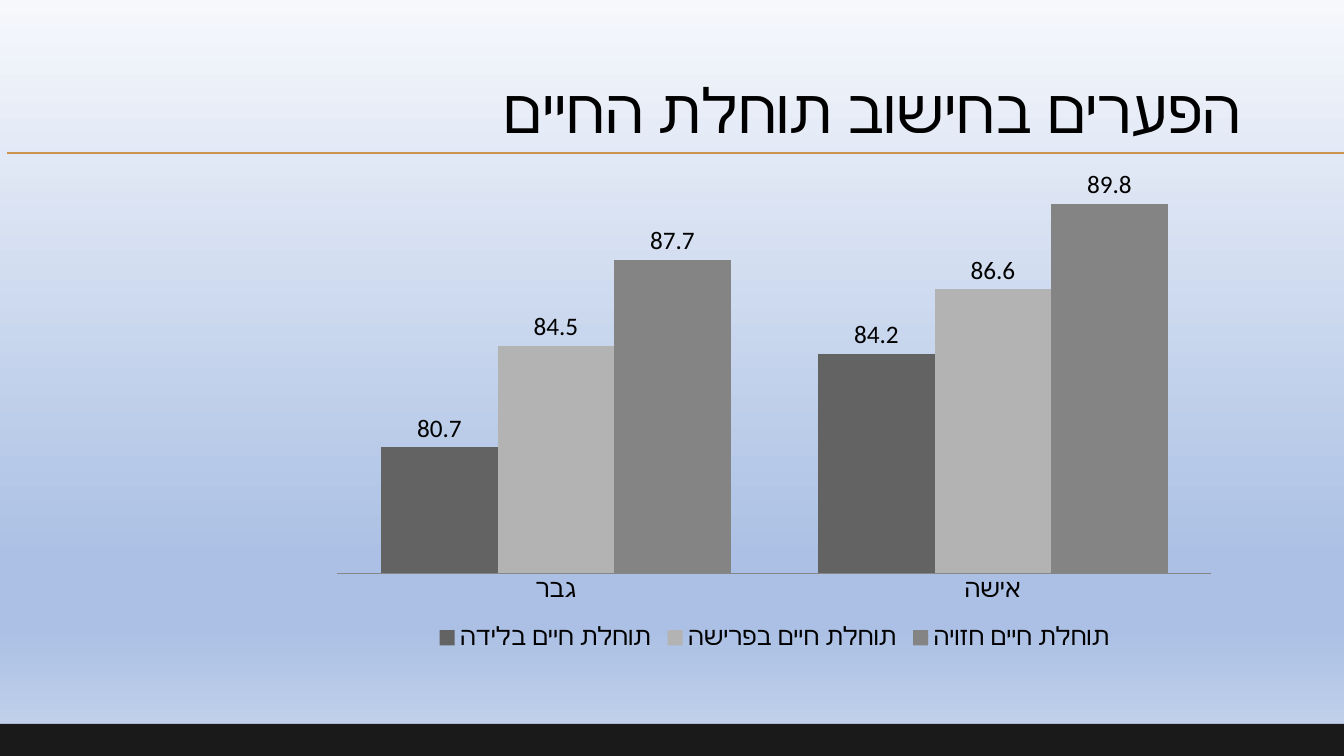
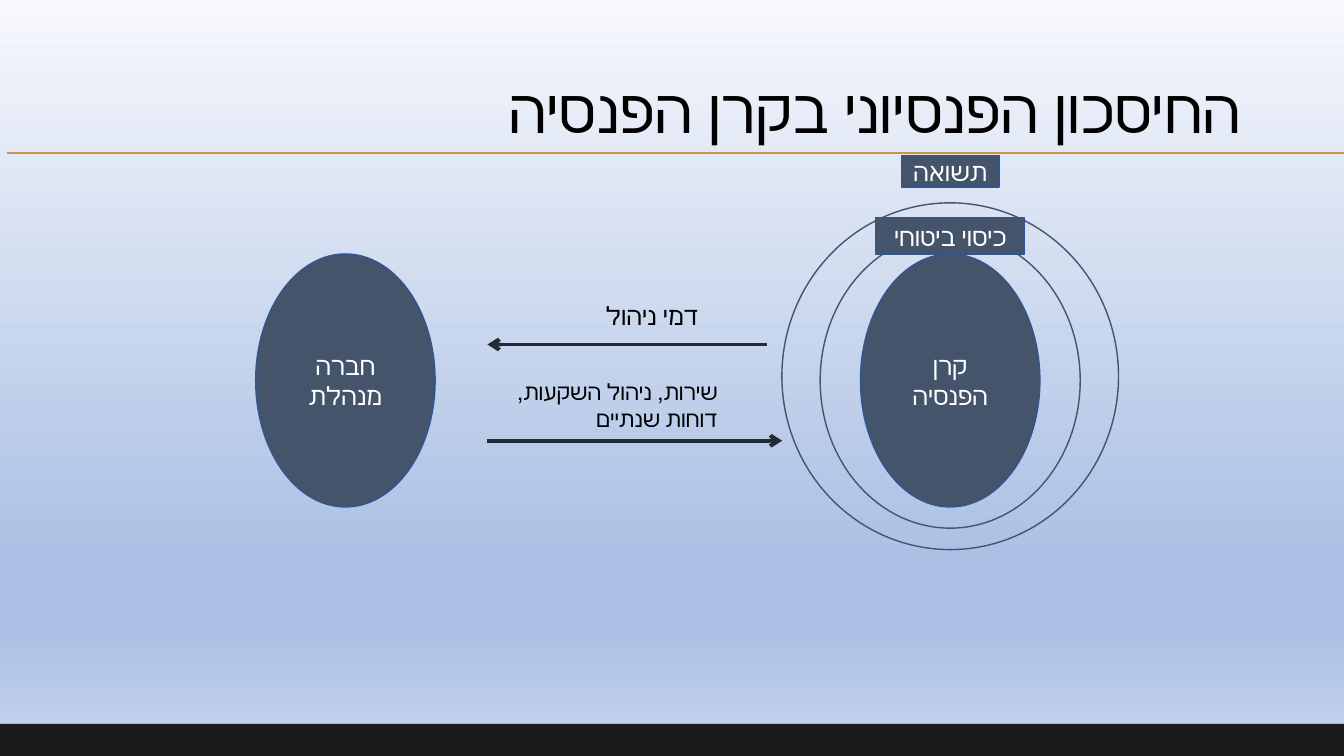
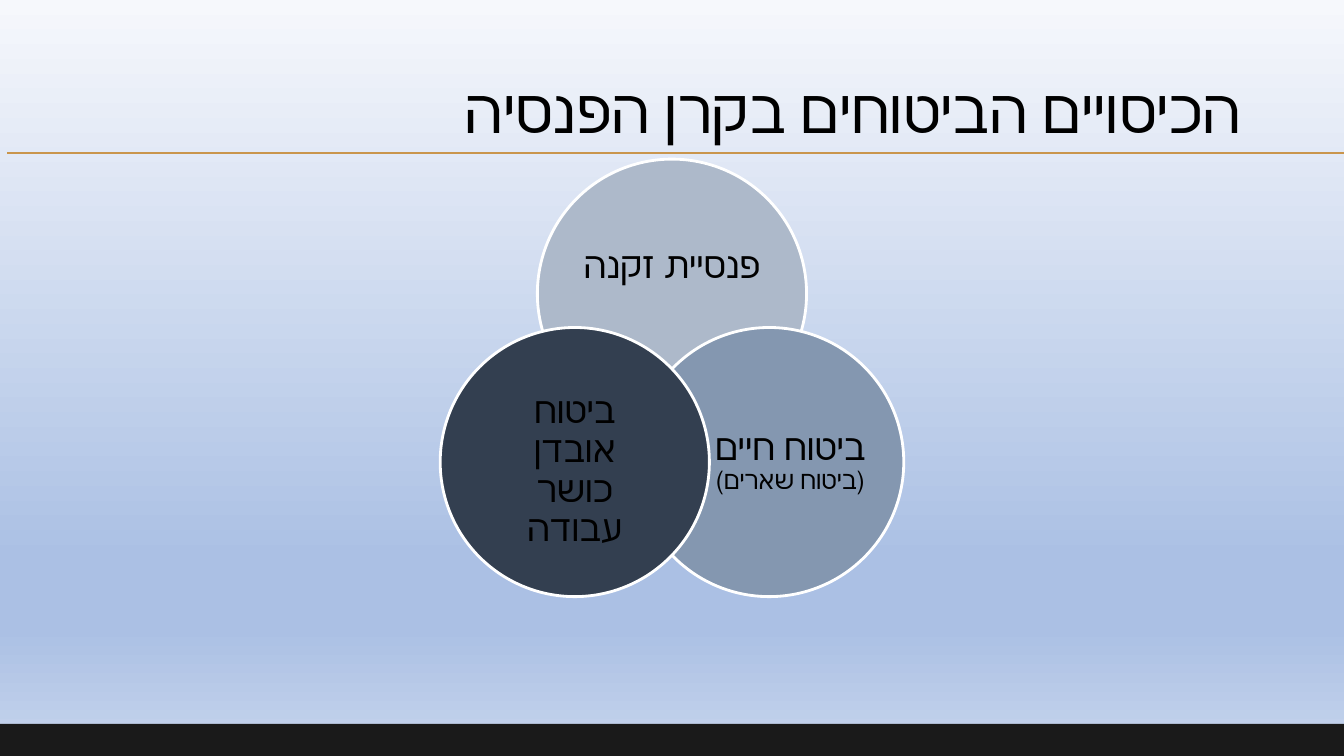
import math

import pptx
import pptx.chart.data
import pptx.dml.color
import pptx.enum.chart
import pptx.enum.lang
import pptx.enum.shapes
import pptx.enum.text
import pptx.oxml.ns
import pptx.util
from lxml import etree

RGB = pptx.dml.color.RGBColor
BLACK = RGB(0x00, 0x00, 0x00)
WHITE = RGB(0xFF, 0xFF, 0xFF)
GOLD = RGB(0xC9, 0x95, 0x4C)
COAL = RGB(0x1A, 0x1A, 0x1A)
SLATE = RGB(0x44, 0x54, 0x6A)
EDGE = RGB(0x32, 0x54, 0x91)
INK = RGB(0x22, 0x2A, 0x35)
MIST = RGB(0xAD, 0xB9, 0xCA)
STEEL = RGB(0x84, 0x97, 0xB0)
NIGHT = RGB(0x33, 0x3F, 0x50)
AXIS = RGB(0x86, 0x86, 0x86)
BARS = [RGB(0x63, 0x63, 0x63), RGB(0xB3, 0xB3, 0xB3), RGB(0x84, 0x84, 0x84)]
SKY = [
    (0, RGB(0xF6, 0xF8, 0xFC)),
    (74, RGB(0xAB, 0xC0, 0xE4)),
    (83, RGB(0xAB, 0xC0, 0xE4)),
    (100, RGB(0xC7, 0xD5, 0xED)),
]

FONT = "Calibri"
WIDE = pptx.util.Inches(13.33)
HIGH = pptx.util.Inches(7.5)
FORM = pptx.enum.shapes.MSO_SHAPE
ALIGN = pptx.enum.text.PP_ALIGN
ANCHOR = pptx.enum.text.MSO_ANCHOR
HEBREW = pptx.enum.lang.MSO_LANGUAGE_ID.HEBREW


def across(share):
    return round(WIDE * share / 100)


def down(share):
    return round(HIGH * share / 100)


def frame(cx, cy, w, h):
    """Turn a centre and size in percent of the slide into left, top, width, height."""
    return across(cx - w / 2), down(cy - h / 2), across(w), down(h)


def tag(parent, name, **attrs):
    return etree.SubElement(parent, pptx.oxml.ns.qn(name), attrs)


def write(shape, text, sizes, color, align=ALIGN.CENTER, anchor=ANCHOR.MIDDLE,
          inset=None, space=1.0):
    """Fill a shape with one right-to-left paragraph; one size for each line."""
    body = shape.text_frame
    body.word_wrap = True
    body.vertical_anchor = anchor
    if inset is not None:
        body.margin_left = body.margin_right = inset
        body.margin_top = body.margin_bottom = inset
    para = body.paragraphs[0]
    para.text = text
    para.alignment = align
    para.line_spacing = space
    para._p.get_or_add_pPr().set("rtl", "1")
    for run, size in zip(para.runs, sizes):
        run.font.size = pptx.util.Pt(size)
        run.font.name = FONT
        run.font.color.rgb = color
        run.font.language_id = HEBREW


def label(slide, box, text, size, **style):
    write(slide.shapes.add_textbox(*frame(*box)), text, [size], BLACK, **style)


def shape(slide, form, box, fill=None, edge=None, width=1):
    item = slide.shapes.add_shape(form, *frame(*box))
    item.shadow.inherit = False
    if fill is None:
        item.fill.background()
    else:
        item.fill.solid()
        item.fill.fore_color.rgb = fill
    if edge is None:
        item.line.fill.background()
    else:
        item.line.color.rgb = edge
        item.line.width = pptx.util.Pt(width)
    return item


def node(slide, form, box, text):
    write(shape(slide, form, box, SLATE, EDGE), text, [18], WHITE)


def line(slide, start, end, y, color, width, arrow=False):
    item = slide.shapes.add_connector(
        pptx.enum.shapes.MSO_CONNECTOR.STRAIGHT,
        across(start), down(y), across(end), down(y))
    item.line.color.rgb = color
    item.line.width = pptx.util.Pt(width)
    if arrow:
        tag(item.line._get_or_add_ln(), "a:tailEnd", type="arrow")
    tag(item._element.spPr, "a:effectLst")


def paint(master):
    """Give every slide the sky gradient."""
    fill = master.background.fill
    fill.gradient()
    fill.gradient_angle = 270
    stops = next(master.element.iter(pptx.oxml.ns.qn("a:gsLst")))
    for stop in list(stops):
        stops.remove(stop)
    for place, color in SKY:
        stop = tag(stops, "a:gs", pos=str(place * 1000))
        tag(stop, "a:srgbClr", val=str(color))


def page(deck, title):
    slide = deck.slides.add_slide(deck.slide_layouts[6])
    line(slide, 100, 0.5, 20.2, GOLD, 1.5)
    shape(slide, FORM.RECTANGLE, (50, 97.87, 100, 4.27), COAL)
    label(slide, (50, 15, 86.25, 19.33), title, 44, align=ALIGN.RIGHT, space=0.9)
    return slide


def gaps(deck):
    slide = page(deck, "הפערים בחישוב תוחלת החיים")
    data = pptx.chart.data.CategoryChartData()
    data.categories = ["גבר", "אישה"]
    data.add_series("תוחלת חיים בלידה", (80.7, 84.2))
    data.add_series("תוחלת חיים בפרישה", (84.5, 86.6))
    data.add_series("תוחלת חיים חזויה", (87.7, 89.8))
    kind = pptx.enum.chart.XL_CHART_TYPE.COLUMN_CLUSTERED
    box = frame(57.62, 52.25, 67.73, 68.93)
    chart = slide.shapes.add_chart(kind, *box, data).chart
    chart.font.size = pptx.util.Pt(18)
    chart.font.name = FONT
    chart.font.color.rgb = BLACK
    chart.has_title = False
    chart.has_legend = True
    chart.legend.position = pptx.enum.chart.XL_LEGEND_POSITION.BOTTOM
    chart.legend.include_in_layout = False

    scale = chart.value_axis
    scale.minimum_scale, scale.maximum_scale = 76, 92
    scale.has_major_gridlines = False
    scale.visible = False
    base = chart.category_axis
    base.major_tick_mark = pptx.enum.chart.XL_TICK_MARK.NONE
    base.format.line.color.rgb = AXIS

    plot = chart.plots[0]
    plot.gap_width = 75
    plot.overlap = 0
    plot.vary_by_categories = False
    plot.has_data_labels = True
    plot.data_labels.show_value = True
    plot.data_labels.position = pptx.enum.chart.XL_LABEL_POSITION.OUTSIDE_END
    for series, color in zip(plot.series, BARS):
        series.format.fill.solid()
        series.format.fill.fore_color.rgb = color


def savings(deck):
    slide = page(deck, "החיסכון הפנסיוני בקרן הפנסיה")
    firm, fund, mid = 25.7, 70.7, 50.33
    for cx, text in ((firm, "חברה מנהלת"), (fund, "קרן הפנסיה")):
        node(slide, FORM.OVAL, (cx, mid, 13.35, 33.47), text)
    line(slide, 36.27, 58.2, 58.3, INK, 2.75, arrow=True)
    line(slide, 57.08, 36.27, 45.57, INK, 2.75, arrow=True)
    for cy, w, h in ((mid, 19.35, 39.07), (49.77, 25.05, 45.87)):
        shape(slide, FORM.OVAL, (fund, cy, w, h), edge=SLATE)
    for cy, w, h, text in ((22.67, 7.28, 4.13, "תשואה"),
                           (31.22, 11.1, 4.87, "כיסוי ביטוחי")):
        node(slide, FORM.RECTANGLE, (fund, cy, w, h), text)
    for box, text, size in (
            ((46.61, 41.67, 12.23, 5.33), "דמי ניהול", 18),
            ((44.7, 53.6, 18.9, 8.53), "שירות, ניהול השקעות, דוחות שנתיים", 16)):
        label(slide, box, text, size, align=ALIGN.RIGHT, anchor=ANCHOR.TOP)


def covers(deck):
    """Three overlapping circles set evenly around one centre."""
    slide = page(deck, "הכיסויים הביטוחים בקרן הפנסיה")
    parts = [
        (MIST, "פנסיית זקנה", [26], (0, -3.55, 14.7, 16)),
        (STEEL, "ביטוח חיים\v(ביטוח שארים)", [26, 18], (1.57, 0, 12, 19.6)),
        (NIGHT, "ביטוח אובדן כושר עבודה", [26], (0, 1.15, 12, 19.6)),
    ]
    for spot, (color, text, sizes, (dx, dy, w, h)) in enumerate(parts):
        angle = math.radians(120 * spot - 90)
        cx = 50 + 8.35 * math.cos(angle)
        cy = 53.7 + 14.85 * math.sin(angle)
        shape(slide, FORM.OVAL, (cx, cy, 20.03, 35.6), color, WHITE, 2)
        panel = shape(slide, FORM.RECTANGLE, (cx + dx, cy + dy, w, h), color)
        write(panel, text, sizes, BLACK, inset=0, space=0.9)


def main():
    deck = pptx.Presentation()
    deck.slide_width, deck.slide_height = WIDE, HIGH
    paint(deck.slide_master)
    gaps(deck)
    savings(deck)
    covers(deck)
    deck.save("out.pptx")


if __name__ == "__main__":
    main()
